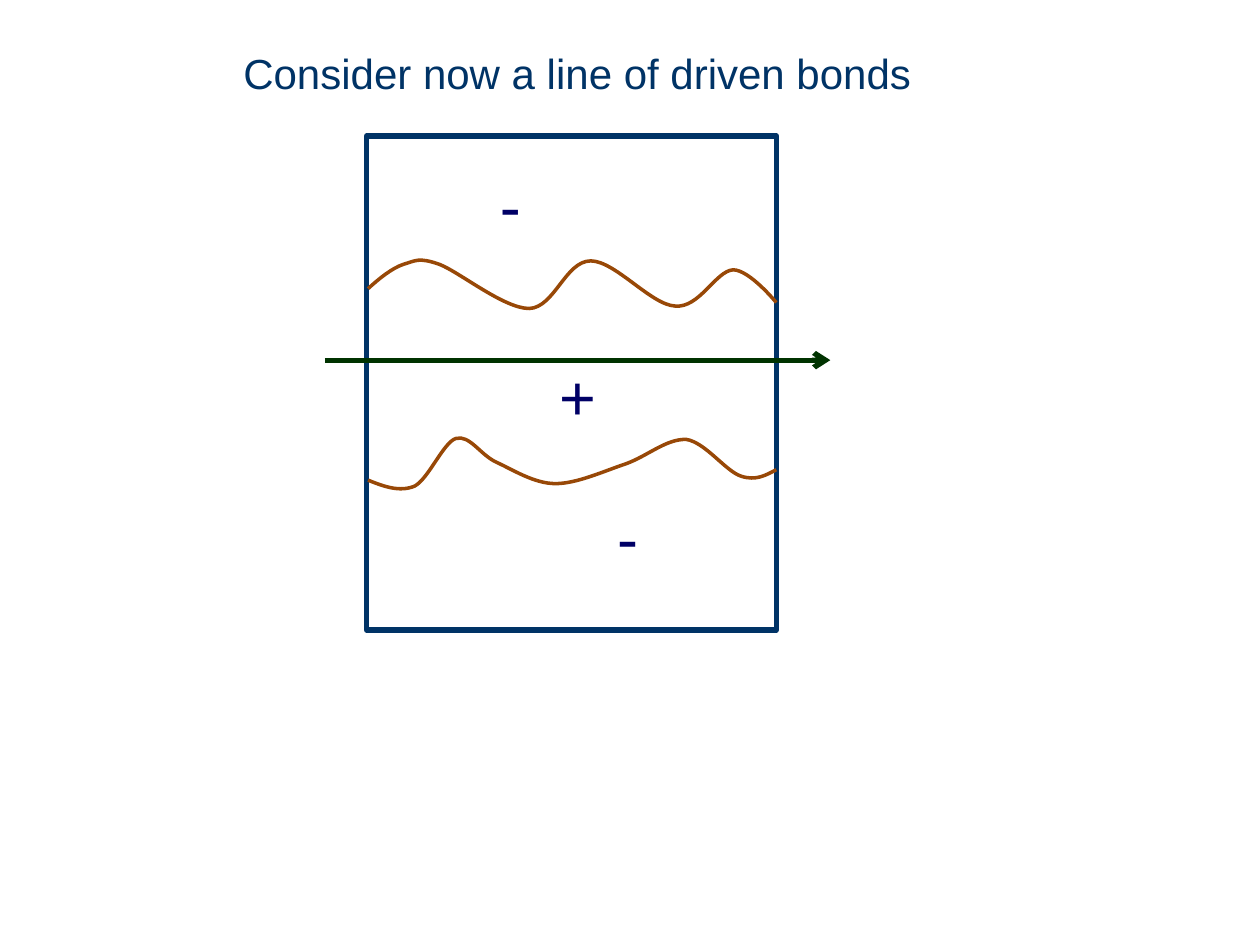
from lxml import etree
from pptx import Presentation
from pptx import util as u
from pptx.dml.color import RGBColor
from pptx.enum import shapes as sh, text as tx
from pptx.oxml.ns import qn

HUES = {"navy": "003366", "rust": "984807", "green": "003300", "ink": "000066"}

# Start point, then three points (two handles and an end) for each curve, in cm
UPPER = [
    (7.42, 5.82),
    (7.65, 5.61), (7.9, 5.41), (8.13, 5.33),
    (8.38, 5.26), (8.43, 5.18), (8.86, 5.33),
    (9.27, 5.49), (10.16, 6.22), (10.67, 6.22),
    (11.18, 6.2), (11.4, 5.26), (11.91, 5.26),
    (12.4, 5.26), (13.13, 6.15), (13.61, 6.17),
    (14.1, 6.22), (14.43, 5.46), (14.78, 5.44),
    (15.11, 5.44), (15.65, 6.1), (15.65, 6.1),
]
LOWER = [
    (7.42, 9.68),
    (7.72, 9.8), (8.05, 9.93), (8.36, 9.8),
    (8.64, 9.65), (8.94, 8.92), (9.19, 8.84),
    (9.47, 8.76), (9.68, 9.17), (10.01, 9.32),
    (10.34, 9.47), (10.77, 9.75), (11.2, 9.75),
    (11.63, 9.75), (12.17, 9.5), (12.62, 9.35),
    (13.06, 9.19), (13.44, 8.84), (13.84, 8.86),
    (14.22, 8.92), (14.63, 9.5), (14.94, 9.6),
    (15.24, 9.7), (15.44, 9.58), (15.65, 9.47),
]
SIGNS = [("+", 11.02, 7.09), ("-", 9.83, 3.23), ("-", 12.19, 9.93)]


def tint(hue):
    return RGBColor.from_string(HUES[hue])


def ink(shape, hue, width):
    """Set the outline colour and width."""
    shape.line.color.rgb = tint(hue)
    shape.line.width = u.Pt(width)


def style(frame, size, hue):
    """Format all text of a frame, left and from the top."""
    frame.vertical_anchor = tx.MSO_ANCHOR.TOP
    for para in frame.paragraphs:
        para.alignment = tx.PP_ALIGN.LEFT
        for run in para.runs:
            run.font.name = "Arial"
            run.font.size = u.Pt(size)
            run.font.color.rgb = tint(hue)


def add_title(slide, words):
    title = slide.shapes.title
    title.left, title.top = u.Cm(4.65), u.Cm(0.84)
    title.width, title.height = u.Cm(14.35), u.Cm(1.27)
    frame = title.text_frame
    frame.text = words
    frame.auto_size = tx.MSO_AUTO_SIZE.NONE
    style(frame, 24, "navy")


def add_box(slide):
    box = slide.shapes.add_shape(
        sh.MSO_SHAPE.RECTANGLE, u.Cm(7.39), u.Cm(2.74), u.Cm(8.26), u.Cm(9.96))
    box.shadow.inherit = False
    box.fill.background()
    ink(box, "navy", 3)


def add_wave(slide, points):
    """Draw an open outline, turning each three segments into one curve."""
    start, *rest = [(u.Cm(x), u.Cm(y)) for x, y in points]
    pen = slide.shapes.build_freeform(*start)
    pen.add_line_segments(rest, close=False)
    wave = pen.convert_to_shape()
    wave.shadow.inherit = False
    wave.fill.background()
    ink(wave, "rust", 2)
    steps = list(wave.element.iter(qn("a:lnTo")))
    for i in range(0, len(steps), 3):
        curve = etree.Element(qn("a:cubicBezTo"))
        steps[i].addprevious(curve)
        for step in steps[i:i + 3]:
            curve.append(step[0])
            step.getparent().remove(step)


def add_sign(slide, sign, left, top):
    label = slide.shapes.add_textbox(
        u.Cm(left), u.Cm(top), u.Cm(0.81 if sign == "+" else 0.61), u.Cm(2.01))
    frame = label.text_frame
    frame.text = sign
    frame.word_wrap = False
    frame.auto_size = tx.MSO_AUTO_SIZE.SHAPE_TO_FIT_TEXT
    style(frame, 36, "ink")


def add_arrow(slide):
    y = u.Cm(7.26)
    arrow = slide.shapes.add_connector(
        sh.MSO_CONNECTOR.STRAIGHT, u.Cm(6.55), y, u.Cm(16.74), y)
    ink(arrow, "green", 3)
    props = arrow.element.spPr
    etree.SubElement(arrow.line.fill._xPr, qn("a:tailEnd"), type="arrow")
    etree.SubElement(props, qn("a:effectLst"))


def main():
    deck = Presentation()
    deck.slide_width, deck.slide_height = u.Cm(25.4), u.Cm(19.05)
    slide = deck.slides.add_slide(deck.slide_layouts[5])
    add_title(slide, "Consider now a line of driven bonds")
    add_box(slide)
    for points in (UPPER, LOWER):
        add_wave(slide, points)
    for sign in SIGNS:
        add_sign(slide, *sign)
    add_arrow(slide)
    deck.save("out.pptx")


if __name__ == "__main__":
    main()
